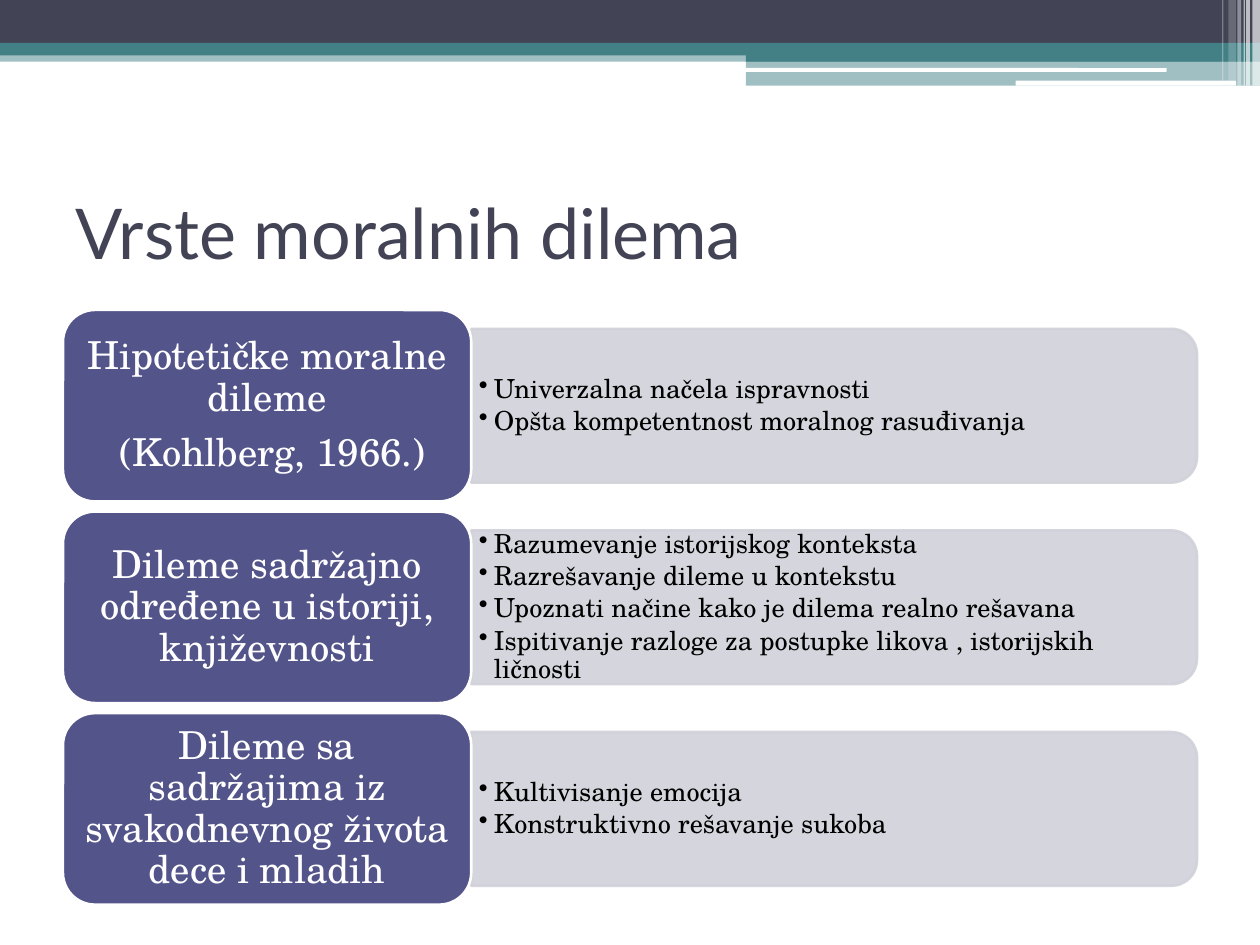
from dataclasses import dataclass

from lxml.etree import SubElement
from pptx import Presentation
from pptx.dml.color import RGBColor as RGB
from pptx.enum.shapes import MSO_SHAPE as SHAPE
from pptx.enum.text import MSO_ANCHOR as ANCHOR, PP_ALIGN as ALIGN
from pptx.oxml.ns import qn
from pptx.util import Inches, Pt


@dataclass(frozen=True)
class Theme:
    dark: str = "424456"
    teal: str = "438086"
    label: str = "53548A"
    panel: str = "D1D1DA"
    white: str = "FFFFFF"
    black: str = "000000"
    title_font: str = "Lato"
    body_font: str = "TeX Gyre Schola"
    title_size: int = 40
    label_size: int = 22
    item_size: int = 15


T = Theme()

# Grid: two columns, three equally spaced rows
SLIDE_W, SLIDE_H = 10, 7.5
LEFT, SPLIT, RIGHT = 0.5, 3.74, 9.5
TOP, ROW_H, ROW_GAP = 2.46, 1.52, 0.08
PANEL_H = 1.22
LABEL_PAD, PANEL_PAD = 0.07, 0.06

# Header bands: left, top, width, height, colour, opacity in percent
BANDS = [
    (0, 0.4, SLIDE_W, 0.09, T.teal, 50),
    (0, 0, SLIDE_W, 0.34, T.dark, 100),
    (0, 0.34, SLIDE_W, 0.1, T.teal, 100),
    (5.92, 0.39, 4.08, 0.1, T.teal, 100),
    (5.92, 0.48, 4.08, 0.2, T.teal, 50),
]
RULES = [(5.91, 0.54, 3.35, 0.03), (8.06, 0.64, 1.75, 0.04)]
# Corner stripes: left, width, height, opacity in percent
STRIPES = [
    (9.94, 0.06, 0.68, 65), (9.89, 0.03, 0.68, 65), (9.87, 0.01, 0.68, 60),
    (9.82, 0.03, 0.68, 40), (9.75, 0.06, 0.64, 20), (9.7, 0.01, 0.64, 30),
]

ROWS = [
    (["Hipotetičke moralne dileme", " (Kohlberg, 1966.)"],
     ["Univerzalna načela ispravnosti",
      "Opšta kompetentnost moralnog rasuđivanja"]),
    (["Dileme sadržajno određene u istoriji, književnosti"],
     ["Razumevanje istorijskog konteksta",
      "Razrešavanje dileme u kontekstu",
      "Upoznati načine kako je dilema realno rešavana",
      "Ispitivanje razloge za postupke likova , istorijskih ličnosti"]),
    (["Dileme sa sadržajima iz svakodnevnog života dece i mladih"],
     ["Kultivisanje emocija", "Konstruktivno rešavanje sukoba"]),
]


def paint(fill, color, opacity):
    fill.solid()
    fill.fore_color.rgb = RGB.from_string(color)
    if opacity < 100:
        clr = fill._xPr.find(f"{qn('a:solidFill')}/{qn('a:srgbClr')}")
        SubElement(clr, qn("a:alpha"), val=str(opacity * 1000))


def add_block(s, kind, box, color, opacity=100, line=None):
    sp = s.shapes.add_shape(kind, *map(Inches, box))
    sp.shadow.inherit = False
    paint(sp.fill, color, opacity)
    if line:
        paint(sp.line.fill, line, opacity)
        sp.line.width = Pt(1.5)
    else:
        sp.line.fill.background()
    return sp


def add_bullet(p, indent=0.12):
    pPr = p._p.get_or_add_pPr()
    pPr.set("marL", str(Inches(indent)))
    pPr.set("indent", str(-Inches(indent)))
    SubElement(pPr, qn("a:buChar"), char="•")


def add_text(s, box, lines, font, size, color, insets=(0.1, 0.05),
             align=ALIGN.LEFT, spacing=None, after=0, bullet=False):
    tf = s.shapes.add_textbox(*map(Inches, box)).text_frame
    tf.word_wrap = True
    tf.vertical_anchor = ANCHOR.MIDDLE
    tf.margin_left = tf.margin_right = Inches(insets[0])
    tf.margin_top = tf.margin_bottom = Inches(insets[1])
    for i, line in enumerate(lines):
        p = tf.add_paragraph() if i else tf.paragraphs[0]
        p.alignment = align
        if spacing:
            p.line_spacing = spacing
            p.space_after = Pt(size * after)
        if bullet:
            add_bullet(p)
        r = p.add_run()
        r.text = line
        r.font.name, r.font.size = font, Pt(size)
        r.font.color.rgb = RGB.from_string(color)


def add_header(s):
    for *box, color, opacity in BANDS:
        add_block(s, SHAPE.RECTANGLE, box, color, opacity)
    for box in RULES:
        add_block(s, SHAPE.ROUNDED_RECTANGLE, box, T.white)
    for left, width, height, opacity in STRIPES:
        add_block(s, SHAPE.RECTANGLE, (left, 0, width, height), T.white, opacity)


def add_row(s, index, label, items):
    top = TOP + index * (ROW_H + ROW_GAP)
    mid = top + ROW_H / 2
    width = RIGHT - SPLIT

    # Panel: a shape with two round corners, turned to point right
    box = ((SPLIT + RIGHT - PANEL_H) / 2, mid - width / 2, PANEL_H, width)
    panel = add_block(s, SHAPE.ROUND_2_SAME_RECTANGLE, box, T.panel, 90, T.panel)
    panel.rotation = 90
    box = (SPLIT, mid - PANEL_H / 2 + PANEL_PAD,
           width - PANEL_PAD, PANEL_H - 2 * PANEL_PAD)
    add_text(s, box, items, T.body_font, T.item_size, T.black,
             (0.06, 0.03), spacing=0.9, after=0.15, bullet=True)

    # Label
    width = SPLIT - LEFT
    add_block(s, SHAPE.ROUNDED_RECTANGLE, (LEFT, top, width, ROW_H),
              T.label, line=T.white)
    box = (LEFT + LABEL_PAD, top + LABEL_PAD,
           width - 2 * LABEL_PAD, ROW_H - 2 * LABEL_PAD)
    add_text(s, box, label, T.body_font, T.label_size, T.white,
             (0.09, 0.05), ALIGN.CENTER, spacing=0.9, after=0.35)


def main():
    prs = Presentation()
    prs.slide_width, prs.slide_height = Inches(SLIDE_W), Inches(SLIDE_H)
    s = prs.slides.add_slide(prs.slide_layouts[6])
    add_header(s)
    add_text(s, (LEFT, 1.25, RIGHT - LEFT, 1.17), ["Vrste moralnih dilema"],
             T.title_font, T.title_size, T.dark)
    for i, (label, items) in enumerate(ROWS):
        add_row(s, i, label, items)
    prs.save("out.pptx")


if __name__ == "__main__":
    main()
